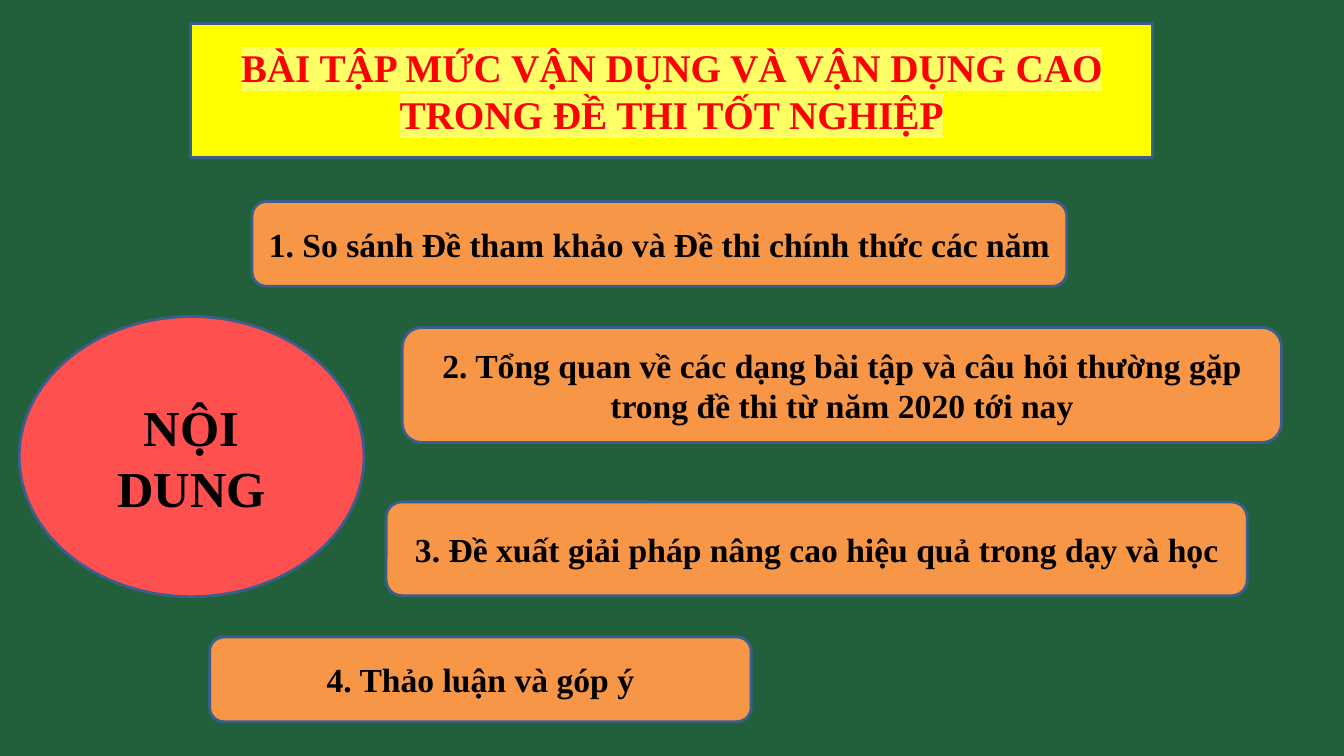
from lxml import etree
from pptx import Presentation
from pptx.dml.color import RGBColor
from pptx.enum import shapes, text
from pptx.oxml import ns
from pptx.util import Inches, Pt

FONT = "Times New Roman"
GREEN, YELLOW, PALE_YELLOW = "22603B", "FFFF00", "FFFF66"
ORANGE, CORAL, RED, BLACK, BLUE = "F79646", "FF5050", "FF0000", "000000", "3A5F8C"

# Agenda entries: wording, then left, top, width, height
TOPICS = [
    ("1. So sánh Đề tham khảo và Đề thi chính thức các năm", (2.5, 2, 8.08, 0.84)),
    ("2. Tổng quan về các dạng bài tập và câu hỏi thường gặp "
     "trong đề thi từ năm 2020 tới nay", (3.99, 3.25, 8.72, 1.14)),
    ("3. Đề xuất giải pháp nâng cao hiệu quả trong dạy và học", (3.83, 4.98, 8.54, 0.93)),
    ("4. Thảo luận và góp ý", (2.08, 6.32, 5.37, 0.84)),
]


def paint(color_format, color):
    color_format.rgb = RGBColor.from_string(color)


def highlight(run, color):
    """Put a marker colour behind a run; it must follow the text fill."""
    mark = etree.Element(ns.qn("a:highlight"))
    etree.SubElement(mark, ns.qn("a:srgbClr"), val=color)
    run.font._element.find(ns.qn("a:solidFill")).addnext(mark)


def write(shape, lines, size=24, color=BLACK, marker=None):
    frame = shape.text_frame
    frame.text = "\n".join(lines)
    frame.word_wrap = True
    frame.auto_size = text.MSO_AUTO_SIZE.NONE
    frame.vertical_anchor = text.MSO_ANCHOR.MIDDLE
    for paragraph in frame.paragraphs:
        paragraph.alignment = text.PP_ALIGN.CENTER
        for run in paragraph.runs:
            run.font.name, run.font.size, run.font.bold = FONT, Pt(size), True
            paint(run.font.color, color)
            if marker:
                highlight(run, marker)


def decorate(shape, fill):
    shape.fill.solid()
    paint(shape.fill.fore_color, fill)
    paint(shape.line.color, BLUE)
    shape.line.width = Pt(2)


def add_box(slide, kind, place, fill):
    box = slide.shapes.add_shape(kind, *map(Inches, place))
    box.shadow.inherit = False
    decorate(box, fill)
    return box


def add_title(slide, lines, place):
    title = slide.shapes.title
    title.left, title.top, title.width, title.height = map(Inches, place)
    # Round the corners of the placeholder
    outline = etree.Element(ns.qn("a:prstGeom"), prst="roundRect")
    etree.SubElement(outline, ns.qn("a:avLst"))
    title._element.spPr.find(ns.qn("a:xfrm")).addnext(outline)
    decorate(title, YELLOW)
    write(title, lines, size=28, color=RED, marker=PALE_YELLOW)


def main():
    deck = Presentation()
    deck.slide_width, deck.slide_height = Inches(13.33), Inches(7.5)
    slide = deck.slides.add_slide(deck.slide_layouts.get_by_name("Title Only"))
    slide.background.fill.solid()
    paint(slide.background.fill.fore_color, GREEN)

    # Heading
    add_title(slide, ["BÀI TẬP MỨC VẬN DỤNG VÀ VẬN DỤNG CAO", "TRONG ĐỀ THI TỐT NGHIỆP"],
              (1.89, 0.23, 9.54, 1.33))

    # Agenda around the hub
    for topic, place in TOPICS:
        write(add_box(slide, shapes.MSO_SHAPE.ROUNDED_RECTANGLE, place, ORANGE), [topic])
    hub = add_box(slide, shapes.MSO_SHAPE.OVAL, (0.19, 3.14, 3.42, 2.78), CORAL)
    write(hub, ["NỘI DUNG"], size=36)

    deck.save("out.pptx")


if __name__ == "__main__":
    main()
